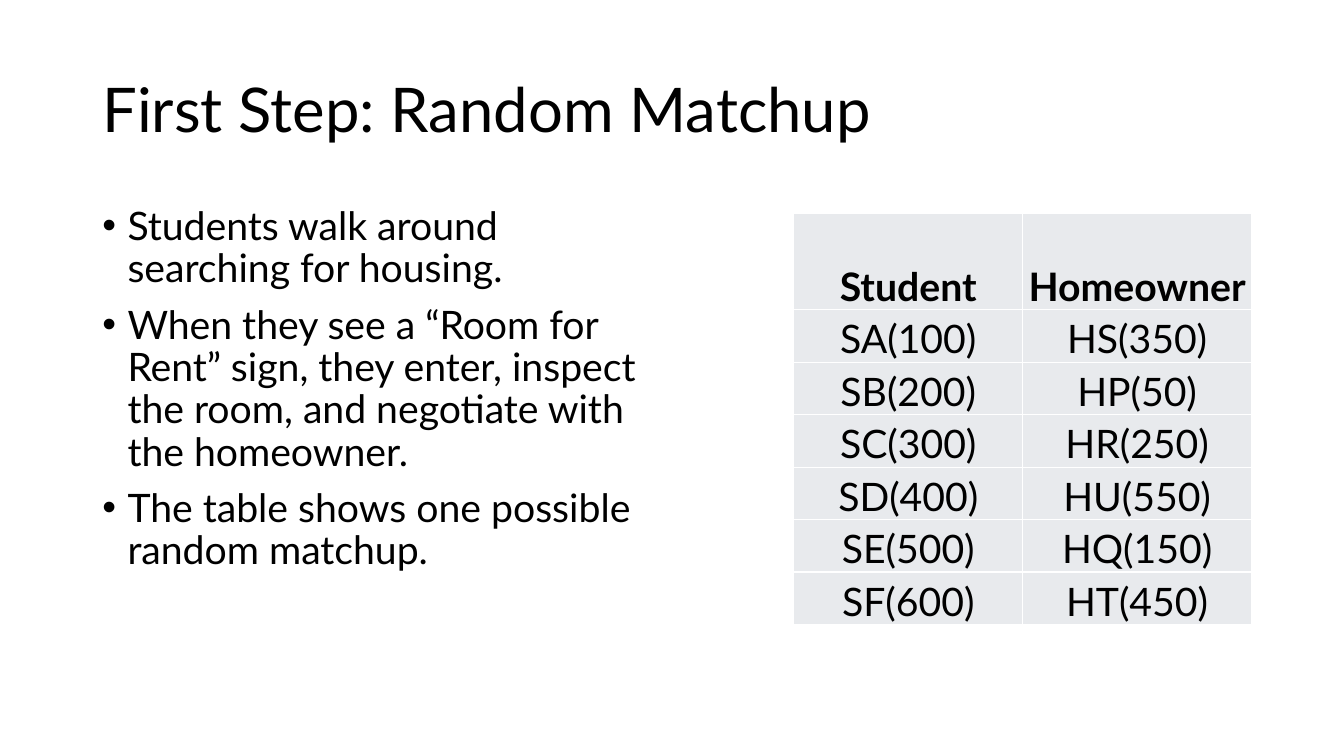
from dataclasses import dataclass

from lxml import etree
from pptx import Presentation
from pptx import util as u
from pptx.dml.color import RGBColor
from pptx.enum import text
from pptx.oxml import ns

PX = 9525


@dataclass(frozen=True)
class Theme:
    """Fonts, colours and type sizes of the slide."""
    font: str = "Lato"
    ink: str = "000000"
    cell: str = "E8EAED"
    border: str = "FFFFFF"
    title: int = 44
    body: int = 28


THEME = Theme()
TITLE = "First Step: Random Matchup"
POINTS = [
    "Students walk around searching for housing.",
    "When they see a “Room for Rent” sign, they enter, inspect the room, "
    "and negotiate with the homeowner.",
    "The table shows one possible random matchup.",
]
MATCHUPS = [
    ("Student", "Homeowner"),
    ("SA(100)", "HS(350)"),
    ("SB(200)", "HP(50)"),
    ("SC(300)", "HR(250)"),
    ("SD(400)", "HU(550)"),
    ("SE(500)", "HQ(150)"),
    ("SF(600)", "HT(450)"),
]


def px(length):
    """Turn pixels into EMU."""
    return u.Emu(length * PX)


def write(paragraph, words, size=THEME.body, bold=False, align=None, spacing=None, before=0):
    """Fill a paragraph with formatted text."""
    paragraph.alignment = align
    paragraph.line_spacing = spacing
    paragraph.space_before = u.Pt(before)
    run = paragraph.add_run()
    run.text = words
    run.font.name = THEME.font
    run.font.size = u.Pt(size)
    run.font.bold = bold
    run.font.color.rgb = RGBColor.from_string(THEME.ink)


def add_bullet(paragraph, indent):
    """Give a paragraph a hanging bullet."""
    properties = paragraph._p.get_or_add_pPr()
    properties.set("marL", str(px(indent)))
    properties.set("indent", str(-px(indent)))
    etree.SubElement(properties, ns.qn("a:buFont"), typeface="Arial")
    etree.SubElement(properties, ns.qn("a:buChar"), char="•")


def add_borders(cell):
    """Draw a thin line on each side of a cell."""
    properties = cell._tc.get_or_add_tcPr()
    for side in "LRTB":
        line = etree.SubElement(properties, ns.qn(f"a:ln{side}"), w=str(u.Pt(1)))
        fill = etree.SubElement(line, ns.qn("a:solidFill"))
        etree.SubElement(fill, ns.qn("a:srgbClr"), val=THEME.border)


def add_frame(slide, box, anchor):
    """Add a wrapping text box and return its frame."""
    frame = slide.shapes.add_textbox(*map(px, box)).text_frame
    frame.word_wrap = True
    frame.vertical_anchor = anchor
    return frame


def add_title(slide, box):
    """Place the slide title."""
    frame = add_frame(slide, box, text.MSO_ANCHOR.MIDDLE)
    write(frame.paragraphs[0], TITLE, size=THEME.title, spacing=0.9)


def add_points(slide, box):
    """Place the bulleted explanation."""
    frame = add_frame(slide, box, text.MSO_ANCHOR.TOP)
    for index, point in enumerate(POINTS):
        paragraph = frame.add_paragraph() if index else frame.paragraphs[0]
        write(paragraph, point, spacing=0.9, before=10 if index else 0)
        add_bullet(paragraph, 24)


def add_matchups(slide, box, header_height):
    """Place the table of students and homeowners."""
    left, top, width, height = box
    rows, columns = len(MATCHUPS), len(MATCHUPS[0])
    table = slide.shapes.add_table(rows, columns, *map(px, box)).table
    table.first_row = table.horz_banding = False
    for column in table.columns:
        column.width = px(width // columns)
    for index, names in enumerate(MATCHUPS):
        row_height = (height - header_height) // (rows - 1) if index else header_height
        table.rows[index].height = px(row_height)
        for cell, name in zip(table.rows[index].cells, names):
            cell.margin_left = cell.margin_right = cell.margin_top = px(1)
            cell.margin_bottom = 0
            cell.vertical_anchor = text.MSO_ANCHOR.BOTTOM
            add_borders(cell)
            cell.fill.solid()
            cell.fill.fore_color.rgb = RGBColor.from_string(THEME.cell)
            write(cell.text_frame.paragraphs[0], name, bold=index == 0,
                  align=text.PP_ALIGN.CENTER)


def main():
    """Build and save the presentation."""
    presentation = Presentation()
    presentation.slide_width, presentation.slide_height = px(1280), px(720)
    slide = presentation.slides.add_slide(presentation.slide_layouts[6])
    add_title(slide, (88, 38, 1104, 139))
    add_points(slide, (88, 192, 544, 457))
    add_matchups(slide, (756, 203, 436, 392), header_height=92)
    presentation.save("out.pptx")


if __name__ == "__main__":
    main()
